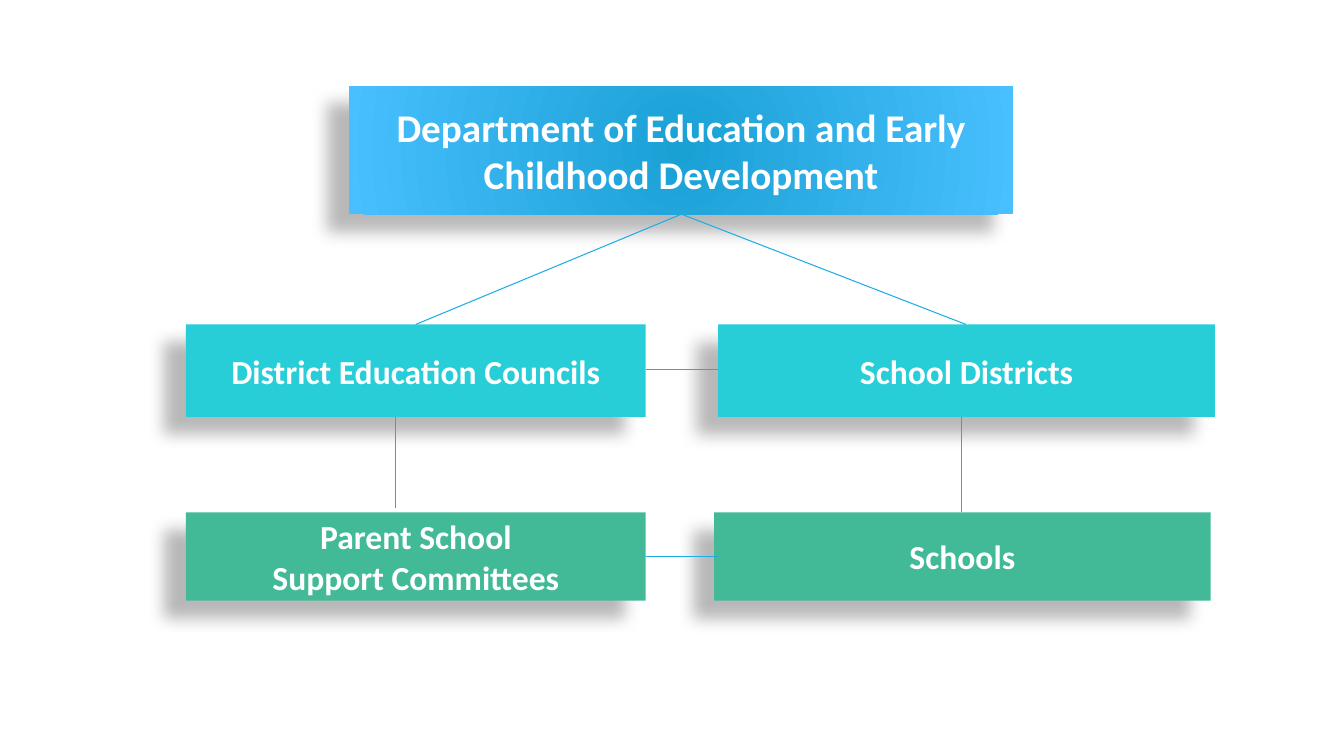
from lxml import etree
from pptx import Presentation
from pptx.dml.color import RGBColor
from pptx.enum.shapes import MSO_CONNECTOR, MSO_SHAPE
from pptx.enum.text import MSO_ANCHOR, PP_ALIGN
from pptx.oxml.ns import qn
from pptx.util import Pt

RECTANGLE = MSO_SHAPE.RECTANGLE
STRAIGHT = MSO_CONNECTOR.STRAIGHT
CENTER = PP_ALIGN.CENTER
MIDDLE = MSO_ANCHOR.MIDDLE

PX = 9525  # EMU per px, 96 px to the inch
COLORS = {
    "text": "FFFFFF",
    "line": "1CADE4",
    "district": "27CED7",
    "school": "42BA97",
    "department_center": "1AA1D4",
    "department_edge": "48BFFF",
    "shadow": "000000",
}


def rgb(name):
    return RGBColor.from_string(COLORS[name])


def add_unit(text, left, top, width, height, size):
    """Add a box with a soft shadow to the lower left and centred bold text."""
    box = page.shapes.add_shape(RECTANGLE, left * PX, top * PX, width * PX, height * PX)
    box.line.fill.background()
    box.shadow.inherit = False
    effects = box._element.spPr.find(qn("a:effectLst"))
    shadow = etree.SubElement(effects, qn("a:outerShdw"), blurRad=str(Pt(11.8)),
                              dist=str(Pt(19.7)), dir=str(141 * 60000),
                              algn="ctr", rotWithShape="0")
    color = etree.SubElement(shadow, qn("a:srgbClr"), val=COLORS["shadow"])
    etree.SubElement(color, qn("a:alpha"), val="28000")

    frame = box.text_frame
    frame.word_wrap = True
    frame.vertical_anchor = MIDDLE
    frame.text = text
    for para in frame.paragraphs:
        para.alignment = CENTER
        for span in para.runs:
            span.font.name = "Calibri"
            span.font.size = Pt(size)
            span.font.bold = True
            span.font.color.rgb = rgb("text")
    return box


deck = Presentation()
deck.slide_width = 1280 * PX
deck.slide_height = 720 * PX
page = deck.slides.add_slide(deck.slide_layouts[6])

# Department box with a radial gradient
department = add_unit("Department of Education and Early Childhood Development",
                      332, 82, 633, 122, 28)
department.fill.gradient()
for stop, position, name in zip(department.fill.gradient_stops, (0, 1),
                                ("department_center", "department_edge")):
    stop.position = position
    stop.color.rgb = rgb(name)
gradient = department._element.spPr.find(qn("a:gradFill"))
gradient.remove(gradient.find(qn("a:lin")))
radial = etree.SubElement(gradient, qn("a:path"), path="circle")
etree.SubElement(radial, qn("a:fillToRect"), l="100000", t="100000", r="100000", b="100000")

# District and school boxes
units = [
    ("School Districts", 684, 309, 473, 88, "district"),
    ("Schools", 680, 488, 473, 84, "school"),
    ("District Education Councils", 177, 309, 438, 88, "district"),
    ("Parent School\nSupport Committees", 177, 488, 438, 84, "school"),
]
for text, left, top, width, height, name in units:
    unit = add_unit(text, left, top, width, height, 24)
    unit.fill.solid()
    unit.fill.fore_color.rgb = rgb(name)

# Connecting lines
links = [
    (916, 397, 916, 488),
    (377, 397, 377, 484),
    (684, 352, 615, 352),
    (684, 530, 615, 530),
    (396, 309, 649, 204),
    (920, 309, 649, 204),
]
for link in links:
    line = page.shapes.add_connector(STRAIGHT, *(end * PX for end in link))
    line.line.color.rgb = rgb("line")
    line.line.width = Pt(0.75)
    etree.SubElement(line._element.spPr, qn("a:effectLst"))

deck.save("out.pptx")
